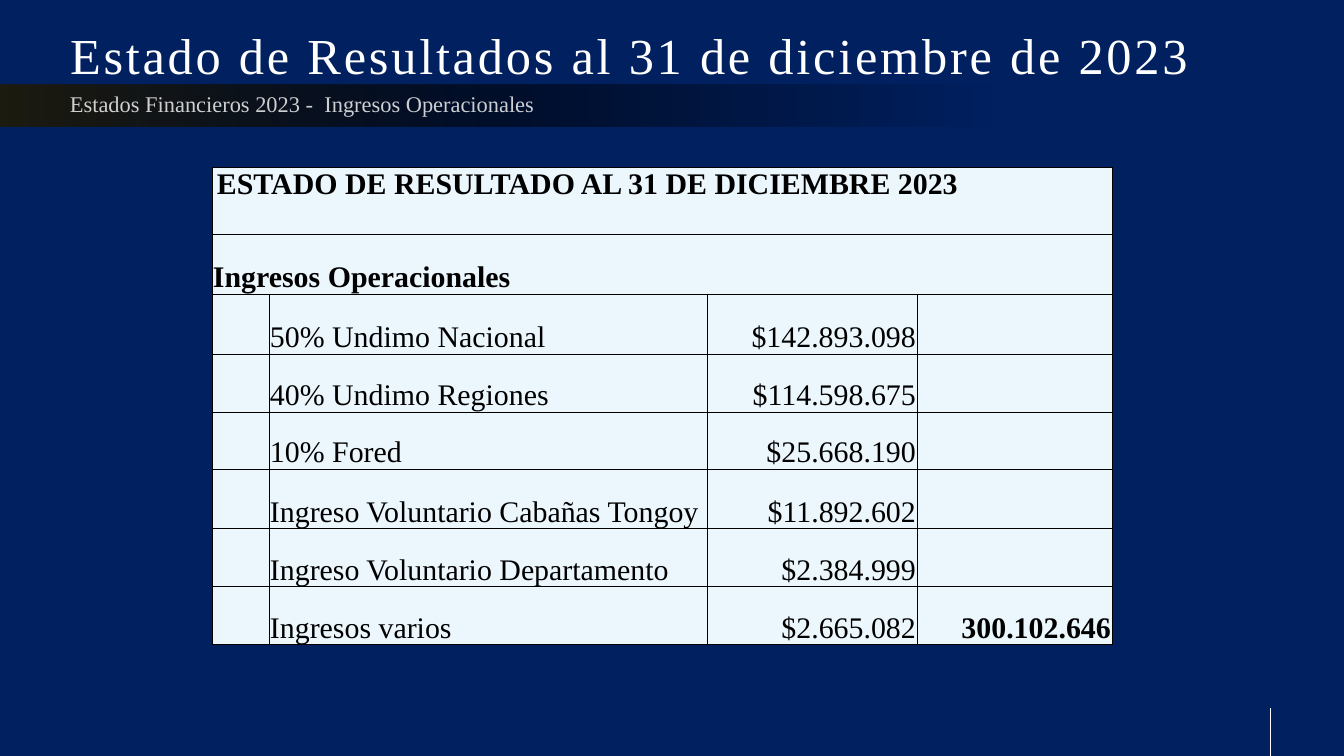
import pptx
import pptx.util
import pptx.dml.color
import pptx.enum.shapes
import pptx.enum.text
import pptx.oxml
import pptx.oxml.ns

# Content
TITLE = "Estado de Resultados al 31 de diciembre de 2023"
SUBTITLE = "Estados Financieros 2023 -  Ingresos Operacionales"
HEADINGS = ["ESTADO DE RESULTADO AL 31 DE DICIEMBRE 2023", "Ingresos Operacionales"]
INCOME = [
    ("50% Undimo Nacional", "$142.893.098", ""),
    ("40% Undimo Regiones", "$114.598.675", ""),
    ("10% Fored", "$25.668.190", ""),
    ("Ingreso Voluntario Cabañas Tongoy", "$11.892.602", ""),
    ("Ingreso Voluntario Departamento", "$2.384.999", ""),
    ("Ingresos varios", "$2.665.082", "300.102.646"),
]
COLUMN_WIDTHS = [57, 438, 210, 195]
ROW_HEIGHTS = [67, 60, 60, 58, 57, 60, 58, 58]

FONT = "Times New Roman"
NAVY, WHITE, BLACK, ICE = "002060", "FFFFFF", "000000", "ECF6FD"
BAND_STOPS = [(0, "1E1C11", 100), (39, BLACK, 54), (74, BLACK, 0), (100, BLACK, 0)]
NAMESPACE = pptx.oxml.ns.nsdecls("a")
ANCHOR = pptx.enum.text.MSO_ANCHOR
ALIGN = pptx.enum.text.PP_ALIGN


def px(length):
    return pptx.util.Emu(round(length * 914400 / 67.2))


def color(code):
    return pptx.dml.color.RGBColor.from_string(code)


def write(frame, text, size, code, align=ALIGN.LEFT, bold=False):
    frame.text = text
    para = frame.paragraphs[0]
    para.alignment = align
    for span in para.runs:
        span.font.name = FONT
        span.font.size = pptx.util.Pt(size)
        span.font.bold = bold
        span.font.color.rgb = color(code)
    return para


def set_margins(frame):
    frame.margin_left = frame.margin_right = px(12)
    frame.margin_top = frame.margin_bottom = px(6)
    frame.word_wrap = True
    frame.auto_size = pptx.enum.text.MSO_AUTO_SIZE.NONE


def format_cell(cell, text="", align=ALIGN.LEFT, bold=False):
    cell.margin_left = cell.margin_right = cell.margin_top = px(1)
    cell.margin_bottom = 0
    cell.vertical_anchor = ANCHOR.BOTTOM
    properties = cell._tc.get_or_add_tcPr()
    for side in ("lnL", "lnR", "lnT", "lnB"):
        properties.append(pptx.oxml.parse_xml(
            f'<a:{side} {NAMESPACE} w="12700"><a:solidFill>'
            f'<a:srgbClr val="{BLACK}"/></a:solidFill></a:{side}>'))
    cell.fill.solid()
    cell.fill.fore_color.rgb = color(ICE)
    if text:
        write(cell.text_frame, text, 32, BLACK, align, bold)


def add_band(page):
    band = page.shapes.add_shape(
        pptx.enum.shapes.MSO_SHAPE.RECTANGLE, 0, px(85), px(1344), px(42))
    band.shadow.inherit = False
    band.line.fill.background()
    stops = "".join(
        f'<a:gs pos="{place * 1000}"><a:srgbClr val="{code}">'
        f'<a:alpha val="{alpha * 1000}"/></a:srgbClr></a:gs>'
        for place, code, alpha in BAND_STOPS)
    geometry = band._element.spPr.find(pptx.oxml.ns.qn("a:prstGeom"))
    geometry.addnext(pptx.oxml.parse_xml(
        f'<a:gradFill {NAMESPACE}><a:gsLst>{stops}</a:gsLst><a:lin ang="0"/></a:gradFill>'))


def add_corner_line(page):
    line = page.shapes.add_connector(
        pptx.enum.shapes.MSO_CONNECTOR.STRAIGHT, px(1270), px(708), px(1270), px(756))
    line.line.color.rgb = color(WHITE)
    line.line.width = pptx.util.Pt(0.75)
    line._element.spPr.append(pptx.oxml.parse_xml(f"<a:effectLst {NAMESPACE}/>"))


def add_title(page):
    title = page.shapes.title
    title.left, title.top, title.width, title.height = px(58), px(0), px(1210), px(91)
    set_margins(title.text_frame)
    title.text_frame.vertical_anchor = ANCHOR.BOTTOM
    para = write(title.text_frame, TITLE, 54, WHITE)
    para.runs[0].font._element.set("spc", "300")


def add_subtitle(page):
    box = page.shapes.add_textbox(px(58), px(87), px(1196), px(42))
    set_margins(box.text_frame)
    para = write(box.text_frame, SUBTITLE, 24, WHITE)
    para.line_spacing = 0.9
    para.space_after = pptx.util.Pt(6)
    tint = para.runs[0].font._element.find(".//" + pptx.oxml.ns.qn("a:srgbClr"))
    tint.append(pptx.oxml.parse_xml(f'<a:alpha {NAMESPACE} val="80000"/>'))


def add_income_table(page):
    table = page.shapes.add_table(
        len(ROW_HEIGHTS), len(COLUMN_WIDTHS), px(212), px(167),
        px(sum(COLUMN_WIDTHS)), px(sum(ROW_HEIGHTS))).table
    for column, width in zip(table.columns, COLUMN_WIDTHS):
        column.width = px(width)
    for row, height in zip(table.rows, ROW_HEIGHTS):
        row.height = px(height)

    # Headings span the full width
    last = len(COLUMN_WIDTHS) - 1
    for index, heading in enumerate(HEADINGS):
        for column in range(last + 1):
            format_cell(table.cell(index, column), "" if column else heading, bold=True)
        table.cell(index, 0).merge(table.cell(index, last))
    table.cell(0, 0).vertical_anchor = ANCHOR.TOP
    table.cell(0, 0).margin_left = px(5)

    # Income lines: indent, concept, amount, total
    for index, (concept, amount, total) in enumerate(INCOME, len(HEADINGS)):
        format_cell(table.cell(index, 0))
        format_cell(table.cell(index, 1), concept)
        format_cell(table.cell(index, 2), amount, ALIGN.RIGHT)
        format_cell(table.cell(index, 3), total, ALIGN.RIGHT, bold=True)


def main():
    deck = pptx.Presentation()
    deck.slide_width, deck.slide_height = px(1344), px(756)
    page = deck.slides.add_slide(deck.slide_layouts[5])
    page.background.fill.solid()
    page.background.fill.fore_color.rgb = color(NAVY)
    add_band(page)
    add_corner_line(page)
    add_title(page)
    add_subtitle(page)
    add_income_table(page)
    deck.save("out.pptx")


if __name__ == "__main__":
    main()
